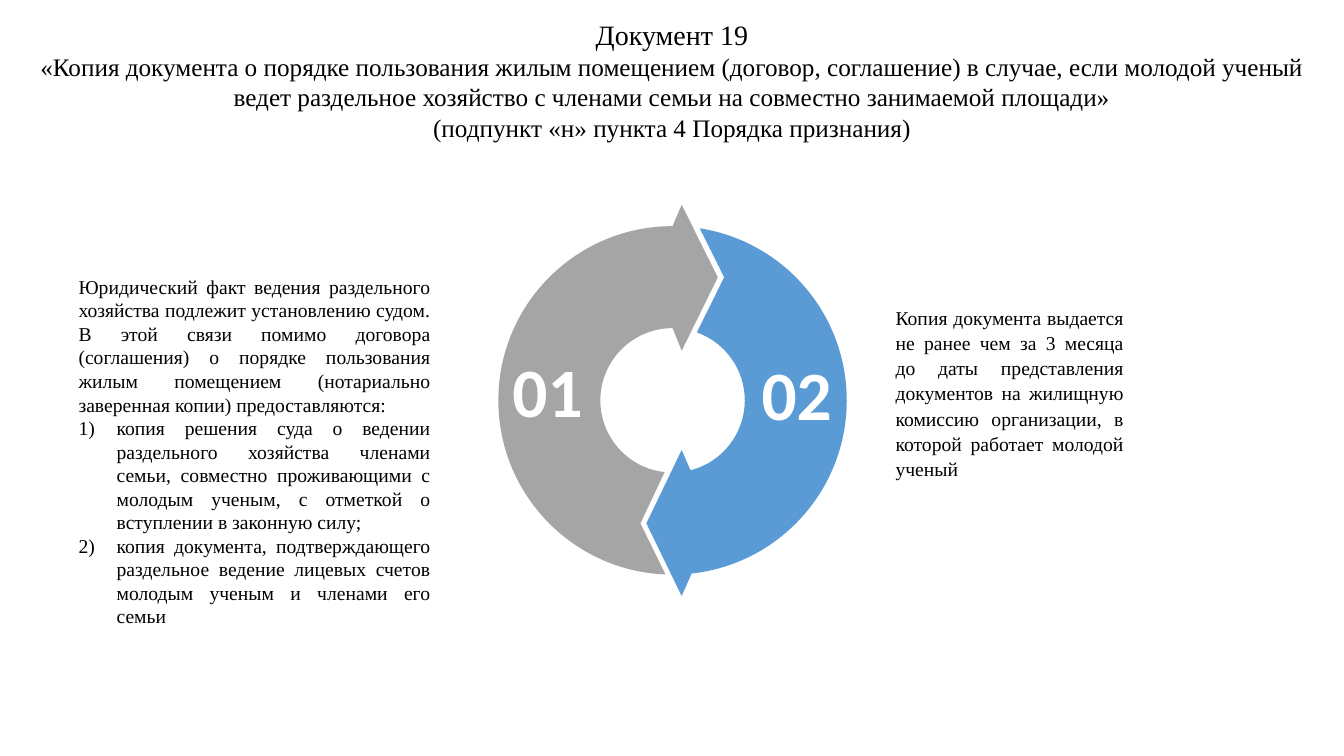
import math

import lxml.etree
import pptx
import pptx.dml.color
import pptx.enum.shapes
import pptx.enum.text
import pptx.oxml.ns
import pptx.util

Cm = pptx.util.Cm
ALIGN = pptx.enum.text.PP_ALIGN
ANCHOR = pptx.enum.text.MSO_ANCHOR
qn = pptx.oxml.ns.qn

BLACK = pptx.dml.color.RGBColor(0x00, 0x00, 0x00)
WHITE = pptx.dml.color.RGBColor(0xFF, 0xFF, 0xFF)
BLUE = pptx.dml.color.RGBColor(0x5B, 0x9B, 0xD5)
GRAY = pptx.dml.color.RGBColor(0xA5, 0xA5, 0xA5)

OUTER_RADIUS = 4.39
INNER_RADIUS = 1.82

TITLE = [
    ("Документ 19", 20),
    ("«Копия документа о порядке пользования жилым помещением (договор, соглашение) "
     "в случае, если молодой ученый ведет раздельное хозяйство с членами семьи "
     "на совместно занимаемой площади»", 18),
    ("(подпункт «н» пункта 4 Порядка признания)", 18),
]
COURT_FACT = (
    "Юридический факт ведения раздельного хозяйства подлежит установлению судом. "
    "В этой связи помимо договора (соглашения) о порядке пользования жилым помещением "
    "(нотариально заверенная копии) предоставляются:"
)
COURT_PAPERS = [
    "копия решения суда о ведении раздельного хозяйства членами семьи, совместно "
    "проживающими с молодым ученым, с отметкой о вступлении в законную силу;",
    "копия документа, подтверждающего раздельное ведение лицевых счетов "
    "молодым ученым и членами его семьи",
]
ISSUE_TERM = (
    "Копия документа выдается не ранее чем за 3 месяца до даты представления "
    "документов на жилищную комиссию организации, в которой работает молодой ученый"
)


def write_text(frame, text, size=14, font="Times New Roman", color=BLACK, bold=False,
               align=ALIGN.JUSTIFY, numbered=False, line_spacing=None, space_after=None):
    """Fill the frame's empty first paragraph, or add one after the others."""
    first = frame.paragraphs[0]
    para = frame.add_paragraph() if first.runs else first
    para.alignment = align
    if line_spacing:
        para.line_spacing = line_spacing
    if space_after:
        para.space_after = pptx.util.Pt(space_after)
    if numbered:
        properties = para._p.get_or_add_pPr()
        properties.set("marL", str(Cm(0.96)))
        properties.set("indent", str(-Cm(0.96)))
        lxml.etree.SubElement(properties, qn("a:buAutoNum"), type="arabicParenR")
    span = para.add_run()
    span.text = text
    span.font.size = pptx.util.Pt(size)
    span.font.name = font
    span.font.bold = bold
    span.font.color.rgb = color


def paint(shape, color):
    shape.fill.solid()
    shape.fill.fore_color.rgb = color
    shape.line.fill.background()
    shape.shadow.inherit = False


def add_title(page, left, top, width, height):
    title = page.shapes.title
    title.left, title.top, title.width, title.height = left, top, width, height
    frame = title.text_frame
    frame.word_wrap = True
    frame.auto_size = pptx.enum.text.MSO_AUTO_SIZE.NONE
    frame.vertical_anchor = ANCHOR.TOP
    for text, size in TITLE:
        write_text(frame, text, size=size, align=ALIGN.CENTER)


def add_court_panel(page, left, top, width, height):
    panel = page.shapes.add_shape(
        pptx.enum.shapes.MSO_SHAPE.RECTANGLE, left, top, width, height)
    paint(panel, WHITE)
    frame = panel.text_frame
    frame.word_wrap = True
    frame.vertical_anchor = ANCHOR.TOP
    write_text(frame, COURT_FACT)
    for paper in COURT_PAPERS:
        write_text(frame, paper, numbered=True)


def add_term_panel(page, left, top, width, height):
    frame = page.shapes.add_textbox(left, top, width, height).text_frame
    frame.word_wrap = True
    write_text(frame, ISSUE_TERM, line_spacing=1.07, space_after=6)


def arc(radius, angles):
    """Curves through the angles (degrees, clockwise from the right), as point lists.

    The first list holds the start; each later one two control points and an end.
    """
    turns = [math.radians(angle) for angle in angles]
    ends = [(radius * math.cos(turn), radius * math.sin(turn)) for turn in turns]
    curves = [[ends[0]]]
    for i in range(1, len(ends)):
        pull = 4 / 3 * math.tan((turns[i] - turns[i - 1]) / 4)
        (x0, y0), (x1, y1) = ends[i - 1], ends[i]
        curves.append([(x0 - pull * y0, y0 + pull * x0), (x1 + pull * y1, y1 - pull * x1),
                       (x1, y1)])
    return curves


def add_ring_arrow(page, center_x, center_y, outer, inner, head, notch, color):
    steps = (arc(OUTER_RADIUS, outer) + [[point] for point in head]
             + arc(INNER_RADIUS, inner) + [[notch]])
    steps = [[(center_x + Cm(x), center_y + Cm(y)) for x, y in step] for step in steps]
    builder = page.shapes.build_freeform(*steps[0][-1])
    builder.add_line_segments([step[-1] for step in steps[1:]], close=True)
    arrow = builder.convert_to_shape()
    paint(arrow, color)
    outline = next(arrow._element.iter(qn("a:path")))
    for segment, step in zip(list(outline), steps):
        if len(step) == 3:
            curve = lxml.etree.Element(qn("a:cubicBezTo"))
            for x, y in step:
                lxml.etree.SubElement(curve, qn("a:pt"), x=str(x - arrow.left),
                                      y=str(y - arrow.top))
            outline.replace(segment, curve)


def add_ring_number(page, text, center_x, center_y):
    width, height = Cm(2.31), Cm(2.36)
    box = page.shapes.add_textbox(center_x - width // 2, center_y - height // 2, width, height)
    frame = box.text_frame
    frame.word_wrap = False
    frame.vertical_anchor = ANCHOR.MIDDLE
    write_text(frame, text, size=49.5, font="Calibri", color=WHITE, bold=True,
               align=ALIGN.CENTER)


def add_ring(page, center_x, center_y):
    add_ring_arrow(page, center_x, center_y, outer=(-81, 0, 83.7), inner=(75.6, 0, -70.3),
                   head=[(0.23, 4.93), (-0.66, 3.1), (0.23, 1.25)], notch=(1.3, -3.1),
                   color=BLUE)
    add_ring_arrow(page, center_x, center_y, outer=(92.3, 180, 270), inner=(270, 180, 96.3),
                   head=[(0.23, -4.93), (1.14, -3.1), (0.23, -1.25)], notch=(-0.81, 3.1),
                   color=GRAY)
    add_ring_number(page, "01", center_x - Cm(3.15), center_y - Cm(0.28))
    add_ring_number(page, "02", center_x + Cm(3.13), center_y - Cm(0.18))


def main():
    deck = pptx.Presentation()
    deck.slide_width, deck.slide_height = Cm(33.87), Cm(19.05)
    page = deck.slides.add_slide(deck.slide_layouts.get_by_name("Title Only"))
    add_court_panel(page, Cm(1.73), Cm(6.8), Cm(9.37), Cm(9.25))
    add_term_panel(page, Cm(22.32), Cm(7.54), Cm(6.25), Cm(4.75))
    add_ring(page, Cm(16.95), Cm(10.09))
    add_title(page, 0, Cm(0.32), deck.slide_width, Cm(3.43))
    deck.save("out.pptx")


if __name__ == "__main__":
    main()
